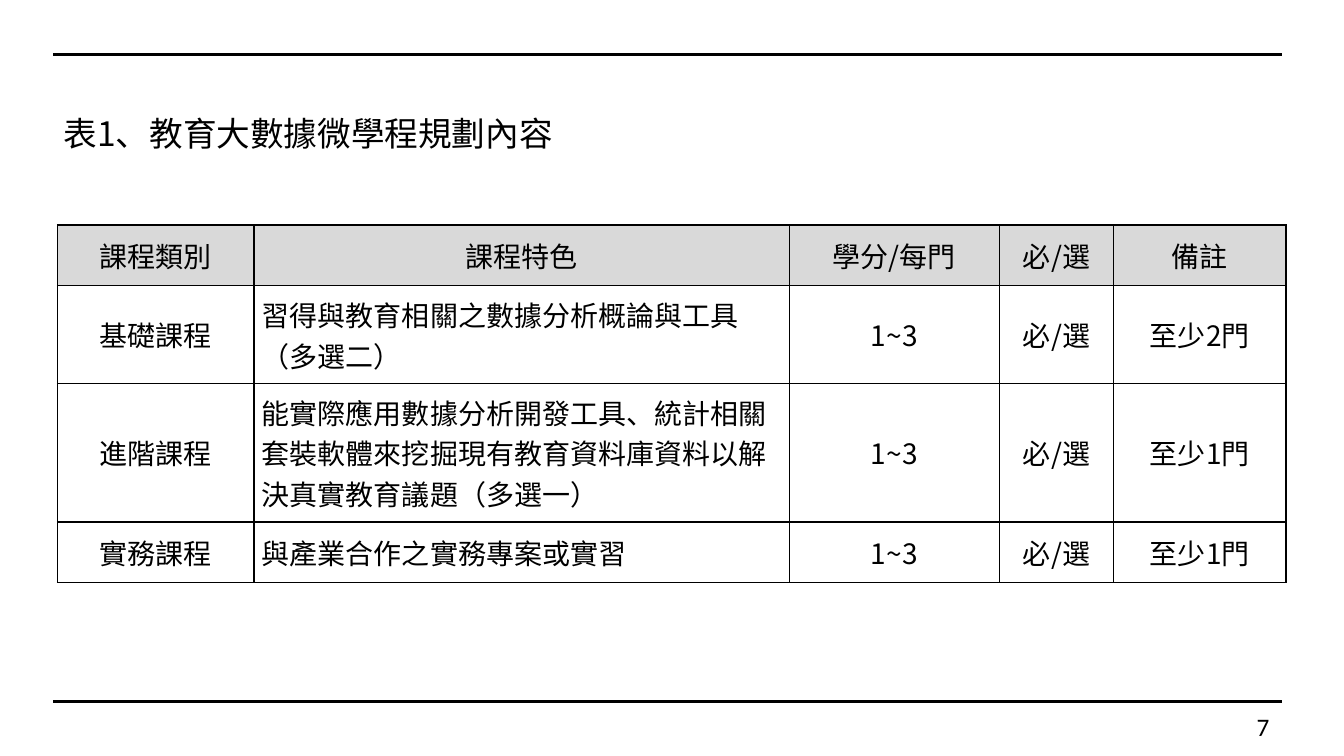
from lxml import etree
from pptx import Presentation
from pptx.dml.color import RGBColor
from pptx.enum.shapes import MSO_CONNECTOR
from pptx.enum.text import MSO_ANCHOR, MSO_AUTO_SIZE, PP_ALIGN
from pptx.oxml import parse_xml
from pptx.oxml.ns import nsdecls, qn
from pptx.util import Pt

BLACK = RGBColor(0x00, 0x00, 0x00)
HEADER_GREY = RGBColor(0xD9, 0xD9, 0xD9)
CJK_FONT = "Noto Sans CJK SC"


def style_text(paragraph, size, font_name, align=PP_ALIGN.LEFT):
    paragraph.alignment = align
    paragraph.font.size = Pt(size)
    paragraph.font.color.rgb = BLACK
    paragraph.font.name = font_name
    # East Asian characters take their font from a:ea
    defaults = paragraph._p.pPr.find(qn("a:defRPr"))
    etree.SubElement(defaults, qn("a:ea")).set("typeface", font_name)


def draw_borders(cell, width):
    props = cell._tc.get_or_add_tcPr()
    for index, side in enumerate(("lnL", "lnR", "lnT", "lnB")):
        props.insert(index, parse_xml(
            f'<a:{side} {nsdecls("a")} w="{Pt(width)}"><a:solidFill>'
            f'<a:srgbClr val="{BLACK}"/></a:solidFill></a:{side}>'))


prs = Presentation()
prs.slide_width, prs.slide_height = Pt(960), Pt(540)
slide = prs.slides.add_slide(prs.slide_layouts[5])
shapes = slide.shapes

# Rules at the top and bottom of the page
for y in (38.7, 501.3):
    rule = shapes.add_connector(
        MSO_CONNECTOR.STRAIGHT, Pt(38), Pt(y), Pt(916), Pt(y))
    rule.line.color.rgb = BLACK
    rule.line.width = Pt(2.25)
    etree.SubElement(rule._element.spPr, qn("a:effectLst"))

# Table caption
caption = shapes.title
caption.left, caption.top = Pt(38.2), Pt(81.4)
caption.width, caption.height = Pt(365.8), Pt(36)
caption_frame = caption.text_frame
caption_frame.text = "表1、教育大數據微學程規劃內容"
caption_frame.word_wrap = True
caption_frame.auto_size = MSO_AUTO_SIZE.NONE
caption_frame.vertical_anchor = MSO_ANCHOR.TOP
caption_frame.paragraphs[0].line_spacing = 0.85
style_text(caption_frame.paragraphs[0], 24, CJK_FONT)

# Course table
courses = [
    ("課程類別", "課程特色", "學分/每門", "必/選", "備註"),
    ("基礎課程", "習得與教育相關之數據分析概論與工具（多選二）",
     "1~3", "必/選", "至少2門"),
    ("進階課程", "能實際應用數據分析開發工具、統計相關套裝軟體來挖掘"
     "現有教育資料庫資料以解決真實教育議題（多選一）",
     "1~3", "必/選", "至少1門"),
    ("實務課程", "與產業合作之實務專案或實習", "1~3", "必/選", "至少1門"),
]
column_widths = (140.4, 382.3, 150.3, 81.4, 123.3)
row_heights = (43.2, 70, 99, 43.2)
course_table = shapes.add_table(
    len(courses), len(column_widths), Pt(41), Pt(160.7),
    Pt(sum(column_widths)), Pt(sum(row_heights))).table
course_table.first_row = False
course_table.horz_banding = False
for column, width in zip(course_table.columns, column_widths):
    column.width = Pt(width)

for r, (course, height) in enumerate(zip(courses, row_heights)):
    course_table.rows[r].height = Pt(height)
    for c, wording in enumerate(course):
        cell = course_table.cell(r, c)
        cell.text = wording
        cell.margin_left = cell.margin_right = Pt(5.6)
        cell.margin_top = cell.margin_bottom = Pt(5.6)
        cell.vertical_anchor = MSO_ANCHOR.MIDDLE
        if r == 0:
            cell.fill.solid()
            cell.fill.fore_color.rgb = HEADER_GREY
        else:
            cell.fill.background()
        is_feature = r > 0 and c == 1
        style_text(cell.text_frame.paragraphs[0], 20, CJK_FONT,
                   PP_ALIGN.LEFT if is_feature else PP_ALIGN.CENTER)
        draw_borders(cell, 1)

# Page number
page_number = shapes.add_textbox(Pt(890.6), Pt(504.7), Pt(50.4), Pt(28.8))
page_number.text_frame.word_wrap = True
page_number.text_frame.text = "7"
style_text(page_number.text_frame.paragraphs[0], 18, "Calibri")

prs.save("out.pptx")
